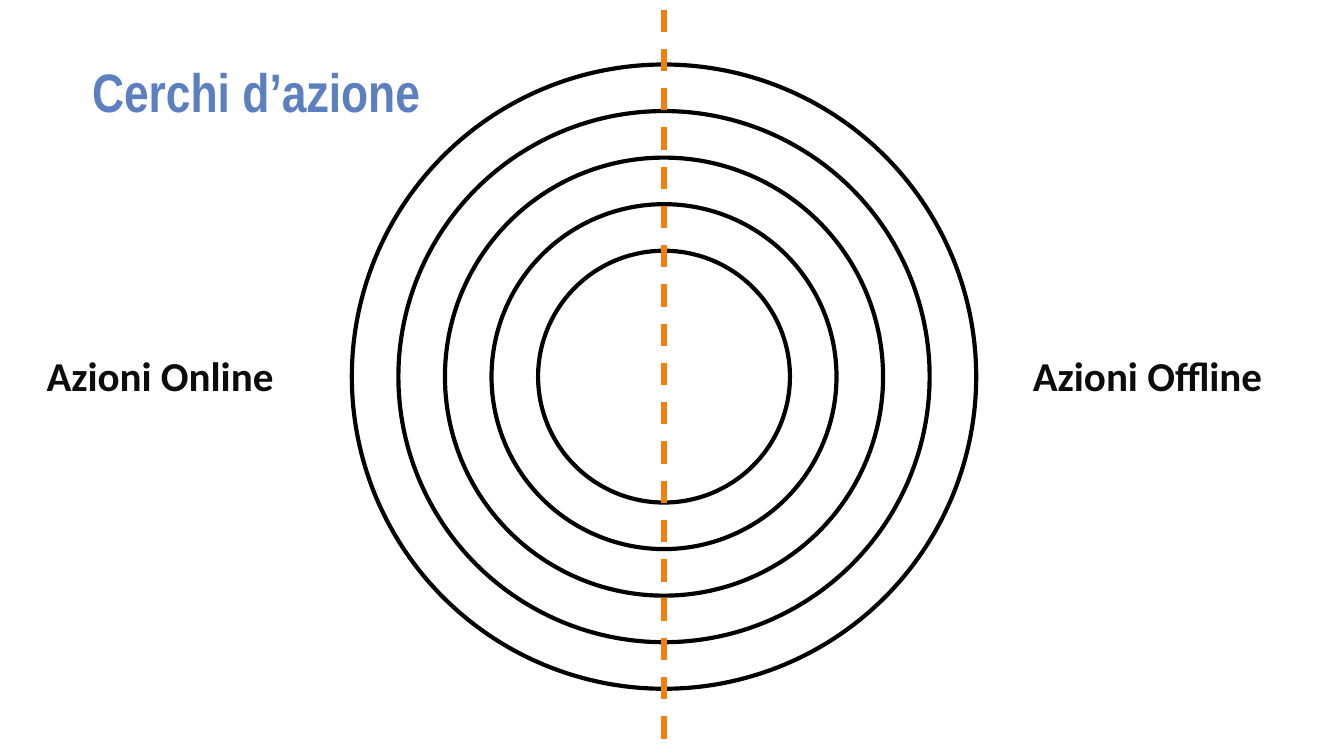
from dataclasses import dataclass

from lxml import etree
from pptx import Presentation
from pptx.dml.color import RGBColor
from pptx.enum import dml, shapes, text
from pptx.oxml import ns
from pptx.util import Cm, Pt


@dataclass(frozen=True)
class Theme:
    title_color: RGBColor = RGBColor(0x5B, 0x7F, 0xBF)
    label_color: RGBColor = RGBColor(0x0C, 0x0C, 0x0C)
    ring_color: RGBColor = RGBColor(0, 0, 0)
    divider_color: RGBColor = RGBColor(0xF0, 0x80, 0x0E)
    title_font: str = "Arial Narrow"
    label_font: str = "Calibri"
    title_size: Pt = Pt(29)
    label_size: Pt = Pt(22)
    ring_width: Pt = Pt(2.25)
    divider_width: Pt = Pt(3)


THEME = Theme()


def add_text(slide, box, wording, font_name, size, color):
    """Place bold, left-aligned, vertically centred text in a box."""
    text_frame = slide.shapes.add_textbox(*map(Cm, box)).text_frame
    text_frame.word_wrap = True
    text_frame.vertical_anchor = text.MSO_ANCHOR.MIDDLE
    text_frame.margin_left = text_frame.margin_right = Cm(0.19)
    text_frame.margin_top = text_frame.margin_bottom = Cm(0.1)
    text_frame.text = wording
    paragraph = text_frame.paragraphs[0]
    paragraph.line_spacing = 0.9
    font = paragraph.runs[0].font
    font.name, font.size, font.bold = font_name, size, True
    font.color.rgb = color


def add_title(slide, box, wording):
    add_text(slide, box, wording, THEME.title_font, THEME.title_size, THEME.title_color)


def add_label(slide, box, wording):
    add_text(slide, box, wording, THEME.label_font, THEME.label_size, THEME.label_color)


def add_rings(slide, box, count, gap):
    """Nest concentric circles in a box, each smaller by one gap on every side."""
    left, top, width, height = box
    for index in range(count):
        inset = index * gap
        ring = slide.shapes.add_shape(
            shapes.MSO_SHAPE.OVAL,
            Cm(left + inset), Cm(top + inset),
            Cm(width - 2 * inset), Cm(height - 2 * inset),
        )
        ring.shadow.inherit = False
        ring.fill.background()
        ring.line.color.rgb = THEME.ring_color
        ring.line.width = THEME.ring_width


def add_divider(slide, x, top, bottom):
    divider = slide.shapes.add_connector(
        shapes.MSO_CONNECTOR.STRAIGHT, Cm(x), Cm(top), Cm(x), Cm(bottom)
    )
    divider.line.color.rgb = THEME.divider_color
    divider.line.width = THEME.divider_width
    divider.line.dash_style = dml.MSO_LINE.DASH
    etree.SubElement(divider._element.spPr, ns.qn("a:effectLst"))


def main():
    presentation = Presentation()
    presentation.slide_width = Cm(25.4)
    presentation.slide_height = Cm(14.29)
    slide = presentation.slides.add_slide(presentation.slide_layouts[6])

    rings_left, rings_size = 6.65, 11.8
    add_title(slide, (1.55, 0.94, 22.28, 1.7), "Cerchi d’azione")
    add_rings(slide, (rings_left, 1.22, rings_size, rings_size), count=5, gap=0.88)
    add_divider(slide, rings_left + rings_size / 2, top=0.18, bottom=14.07)
    for left, wording in ((0.69, "Azioni Online"), (19.33, "Azioni Offline")):
        add_label(slide, (left, 5.79, 5.08, 2.72), wording)

    presentation.save("out.pptx")


if __name__ == "__main__":
    main()
